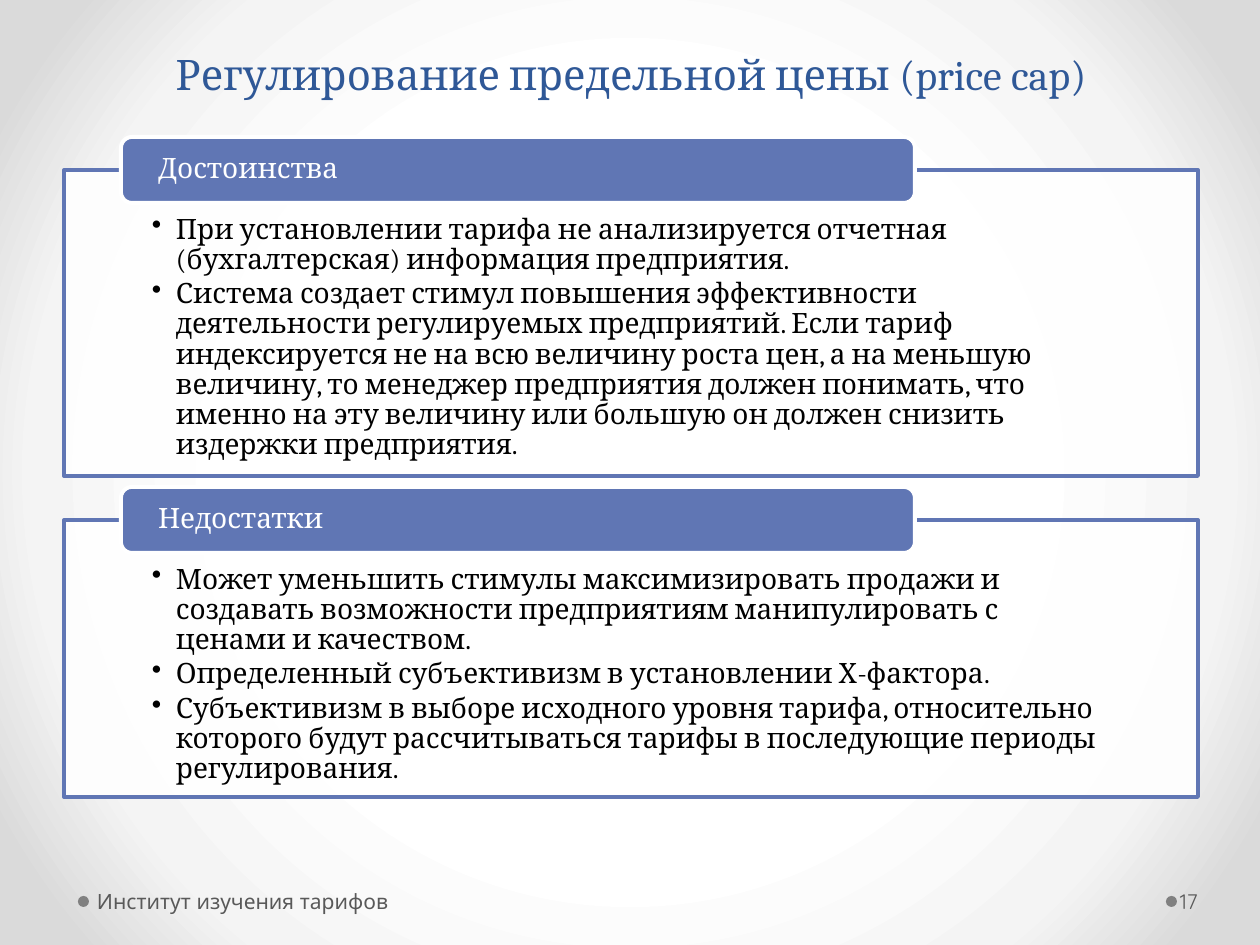
from pptx import Presentation
from pptx.dml.color import RGBColor
from pptx.enum.shapes import MSO_SHAPE
from pptx.enum.text import MSO_ANCHOR, PP_ALIGN
from pptx.oxml import parse_xml
from pptx.oxml.ns import nsdecls, qn
from pptx.util import Emu, Pt

RECTANGLE, ROUNDED, OVAL = MSO_SHAPE.RECTANGLE, MSO_SHAPE.ROUNDED_RECTANGLE, MSO_SHAPE.OVAL
TOP, MIDDLE, BOTTOM = MSO_ANCHOR.TOP, MSO_ANCHOR.MIDDLE, MSO_ANCHOR.BOTTOM
LEFT, CENTER = PP_ALIGN.LEFT, PP_ALIGN.CENTER
PX = 914400 / 126
BLUE = "6076B4"


def add_box(kind, place, fill=None, line=None):
    """Add a preset shape, or a text box when kind is None; place is in px."""
    place = [Emu(round(value * PX)) for value in place]
    if kind is None:
        return page.shapes.add_textbox(*place)
    box = page.shapes.add_shape(kind, *place)
    box.shadow.inherit = False
    box.fill.solid()
    box.fill.fore_color.rgb = RGBColor.from_string(fill)
    if line:
        box.line.color.rgb = RGBColor.from_string(line)
        box.line.width = Pt(2.25)
    else:
        box.line.fill.background()
    return box


def write(box, text, size, font, color, anchor, insets, align=LEFT):
    """Fill a box with text, one paragraph a line; insets are left, top, right, bottom."""
    frame = box.text_frame
    frame.text = text
    frame.word_wrap = True
    frame.vertical_anchor = anchor
    (frame.margin_left, frame.margin_top,
     frame.margin_right, frame.margin_bottom) = [Emu(round(value * PX)) for value in insets]
    for para in frame.paragraphs:
        para.alignment = align
        for span in para.runs:
            span.font.size = Pt(size)
            span.font.name = font
            span.font.color.rgb = RGBColor.from_string(color)
    return frame.paragraphs


deck = Presentation()
deck.slide_width, deck.slide_height = Emu(round(1260 * PX)), Emu(round(945 * PX))
page = deck.slides.add_slide(deck.slide_layouts[6])

stops = "".join(
    f'<a:gs pos="{percent * 1000}"><a:srgbClr val="{color}"/></a:gs>'
    for percent, color in [(50, "FFFFFF"), (76, "F4F4F4"), (92, "DADADA")])
page.element.cSld.insert(0, parse_xml(
    f'<p:bg {nsdecls("p", "a")}><p:bgPr><a:gradFill rotWithShape="1"><a:gsLst>{stops}</a:gsLst>'
    '<a:path path="circle"><a:fillToRect l="50000" t="50000" r="50000" b="50000"/></a:path>'
    '</a:gradFill><a:effectLst/></p:bgPr></p:bg>'))

title = add_box(None, (64, 26, 1134, 79))
write(title, "Регулирование предельной цены (price cap)", 24, "Cambria", "2F5897",
      BOTTOM, (13, 6, 13, 6), CENTER)

sections = [
    ("Достоинства", 170, 306, [
        "При установлении тарифа не анализируется отчетная (бухгалтерская) информация предприятия.",
        "Система создает стимул повышения эффективности деятельности регулируемых предприятий. "
        "Если тариф индексируется не на всю величину роста цен, а на меньшую величину, "
        "то менеджер предприятия должен понимать, что именно на эту величину или большую "
        "он должен снизить издержки предприятия.",
    ]),
    ("Недостатки", 520, 277, [
        "Может уменьшить стимулы максимизировать продажи и создавать возможности "
        "предприятиям манипулировать с ценами и качеством.",
        "Определенный субъективизм в установлении Х-фактора.",
        "Субъективизм в выборе исходного уровня тарифа, относительно которого будут "
        "рассчитываться тарифы в последующие периоды регулирования.",
    ]),
]
for heading, top, height, points in sections:
    panel = add_box(RECTANGLE, (64, top, 1134, height), "FFFFFF", BLUE)
    panel_color = panel.element.spPr.find(qn("a:solidFill"))[0]
    panel_color.append(parse_xml(f'<a:alpha {nsdecls("a")} val="90000"/>'))
    for para in write(panel, "\n".join(points), 16, "Cambria", "000000", TOP, (88, 45, 88, 15)):
        para.line_spacing = 0.9
        para.space_after = Pt(2.4)
        settings = para._p.get_or_add_pPr()
        settings.set("marL", str(round(24 * PX)))
        settings.set("indent", str(-round(24 * PX)))
        settings.append(parse_xml(f'<a:buChar {nsdecls("a")} char="•"/>'))

    label = add_box(ROUNDED, (121, top - 33, 794, 66), BLUE, "FFFFFF")
    for para in write(label, heading, 16, "Cambria", "FFFFFF", MIDDLE, (34, 0, 34, 0)):
        para.line_spacing = 0.9

footer = [
    ("Институт изучения тарифов", 78, (91, 876, 392, 50), (6, 6, 13, 6)),
    ("17", 1166, (1177, 876, 77, 50), (3, 6, 6, 6)),
]
for text, dot_left, place, insets in footer:
    add_box(OVAL, (dot_left, 896, 11, 11), "808080")
    write(add_box(None, place), text, 12, "Quicksand", "595959", MIDDLE, insets)

deck.save("out.pptx")
